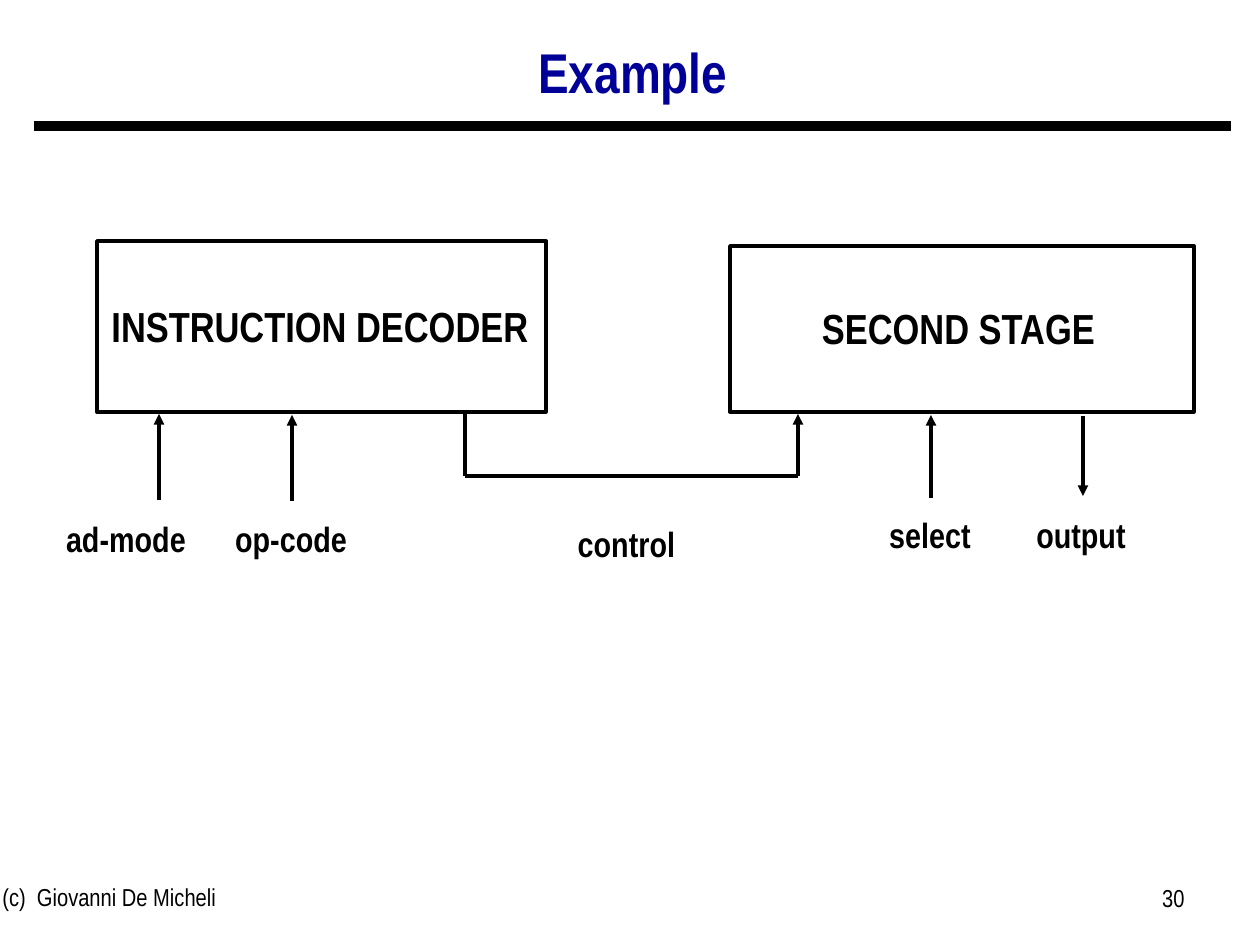
"""Build the slide of an instruction decoder that controls a second stage."""
from lxml import etree
from pptx import Presentation
from pptx.dml.color import RGBColor
from pptx.enum.shapes import MSO_CONNECTOR, MSO_SHAPE
from pptx.enum.text import MSO_ANCHOR, PP_ALIGN
from pptx.oxml.ns import qn
from pptx.util import Pt

LINE, RECT = MSO_CONNECTOR.STRAIGHT, MSO_SHAPE.RECTANGLE
TOP, MID = MSO_ANCHOR.TOP, MSO_ANCHOR.MIDDLE
LEFT, MIDDLE, RIGHT = PP_ALIGN.LEFT, PP_ALIGN.CENTER, PP_ALIGN.RIGHT
COLORS = {"ink": "000000", "title": "000099"}
FONT = "Arial Narrow"
SCALE = 914400 / 126

TITLE = ("Example", (34, 28, 1198, 94))
RULE = (34, 126, 1231, 126)
BOXES = [(97, 241, 449, 171), (730, 246, 464, 166)]
NAMES = [
    ("INSTRUCTION DECODER", (97, 294, 446, 63)),
    ("SECOND STAGE", (808, 296, 301, 63)),
]
LABELS = [
    ("ad-mode", (51, 511, 150, 54)),
    ("op-code", (220, 511, 142, 54)),
    ("select", (873, 507, 114, 54)),
    ("output", (1020, 507, 122, 54)),
    ("control", (562, 516, 129, 54)),
]
FOOT = [
    ("(c)  Giovanni De Micheli", (-10, 876, 399, 66), LEFT),
    ("30", (903, 877, 294, 66), RIGHT),
]
ARROWS = [
    (159, 500, 159, 414),
    (292, 501, 292, 415),
    (931, 498, 931, 415),
    (1083, 416, 1083, 496),
    (798, 476, 798, 414),
]
WIRES = [(465, 413, 465, 476), (465, 476, 798, 476)]


def emu(spot):
    return [round(n * SCALE) for n in spot]


def paint(form, color="ink"):
    form.rgb = RGBColor.from_string(COLORS[color])


def write(frame, text, size, bold=True, color="ink", align=MIDDLE,
          anchor=MID, wrap=False):
    for key, val in {"word_wrap": wrap, "vertical_anchor": anchor}.items():
        setattr(frame, key, val)
    par = frame.paragraphs[0]
    par.alignment = align
    run = par.add_run()
    run.text = text
    for key, val in {"name": FONT, "size": Pt(size), "bold": bold}.items():
        setattr(run.font, key, val)
    paint(run.font.color, color)
    return par


def label(slide, text, spot, size, **form):
    write(slide.shapes.add_textbox(*emu(spot)).text_frame, text, size, **form)


def wire(slide, ends, width=2, arrow=False):
    link = slide.shapes.add_connector(LINE, *emu(ends))
    link.line.width = Pt(width)
    paint(link.line.color)
    props = link._element.spPr
    if arrow:
        tip = etree.SubElement(props.find(qn("a:ln")), qn("a:tailEnd"))
        tip.set("type", "triangle")
    etree.SubElement(props, qn("a:effectLst"))


def main():
    deck = Presentation()
    deck.slide_width, deck.slide_height = emu((1260, 945))
    slide = deck.slides.add_slide(deck.slide_layouts[5])

    text, spot = TITLE
    head = slide.shapes.title
    for key, val in zip(("left", "top", "width", "height"), emu(spot)):
        setattr(head, key, val)
    par = write(head.text_frame, text, 32, color="title", wrap=True)
    par.line_spacing = 0.9
    wire(slide, RULE, width=6)

    for spot in BOXES:
        box = slide.shapes.add_shape(RECT, *emu(spot))
        box.shadow.inherit = False
        box.fill.background()
        box.line.width = Pt(2)
        paint(box.line.color)
    for text, spot in NAMES:
        label(slide, text, spot, 24)
    for text, spot in LABELS:
        label(slide, text, spot, 20)
    for text, spot, align in FOOT:
        label(slide, text, spot, 14, bold=False, align=align, anchor=TOP,
              wrap=True)
    for ends in WIRES:
        wire(slide, ends)
    for ends in ARROWS:
        wire(slide, ends, arrow=True)

    deck.save("out.pptx")


if __name__ == "__main__":
    main()
